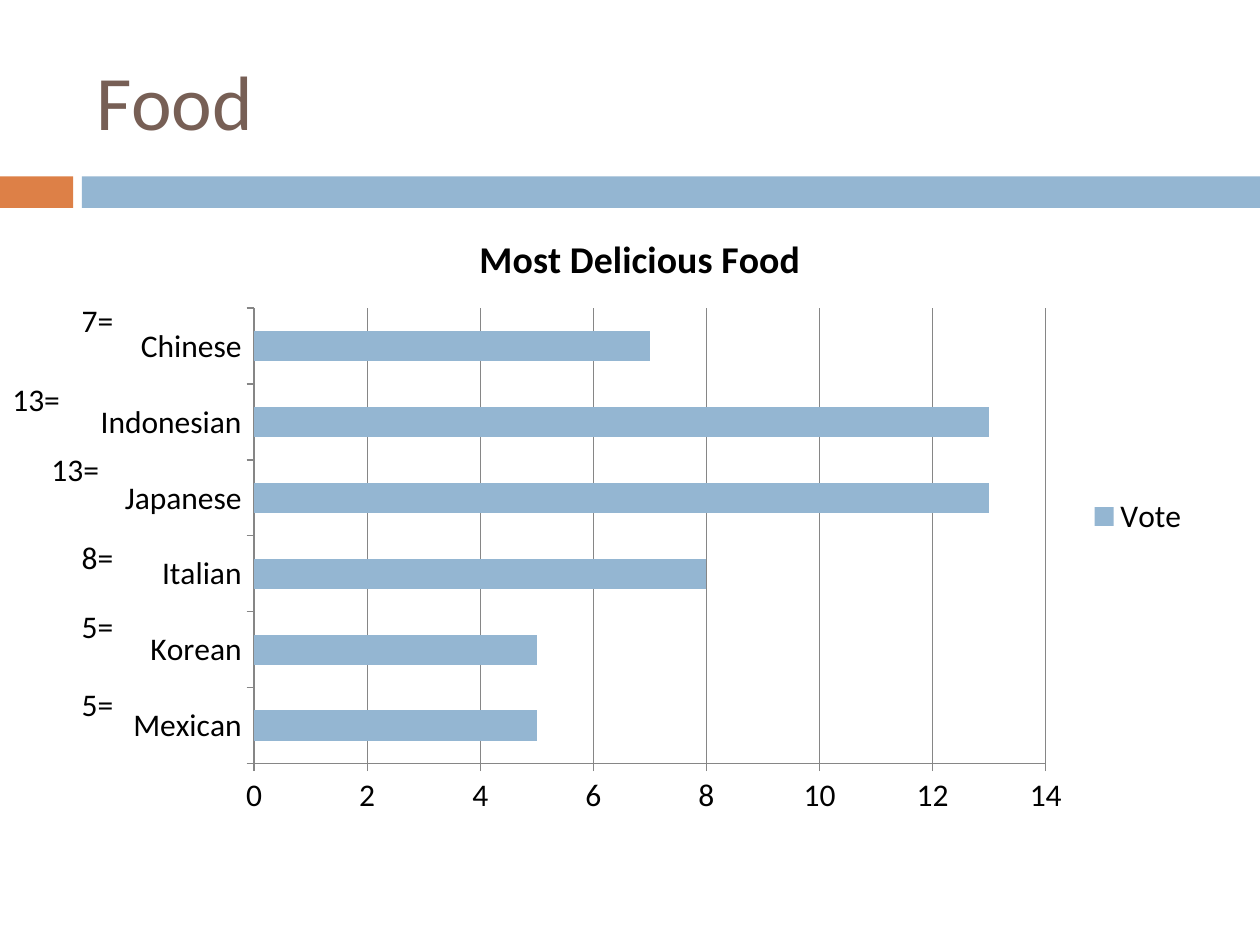
from pptx import Presentation
from pptx.chart.data import CategoryChartData
from pptx.dml.color import RGBColor
from pptx.enum import chart as ch, shapes, text
from pptx.util import Inches, Pt

FONT = "Calibri"
COLORS = {"orange": "DD8047", "blue": "94B6D2", "brown": "775F55",
          "black": "000000", "grid": "868686"}
TITLE = "Food"
CHART_TITLE = "Most Delicious Food"
SERIES = "Vote"
# food, votes, left and top of its vote label; listed from top to bottom
VOTES = [
    ("Chinese", 7, 0.55, 2.34),
    ("Indonesian", 13, 0, 2.97),
    ("Japanese", 13, 0.31, 3.52),
    ("Italian", 8, 0.55, 4.22),
    ("Korean", 5, 0.55, 4.77),
    ("Mexican", 5, 0.55, 5.39),
]
BANDS = [(0, 0.58, "orange"), (0.65, 9.35, "blue")]


def rgb(name):
    return RGBColor.from_string(COLORS[name])


def style(font, size, color="black", bold=False):
    font.name, font.size, font.bold = FONT, Pt(size), bold
    font.color.rgb = rgb(color)


def add_label(slide, words, box, size, color="black"):
    frame = slide.shapes.add_textbox(*map(Inches, box)).text_frame
    frame.word_wrap = True
    frame.vertical_anchor = text.MSO_ANCHOR.MIDDLE
    frame.text = words
    style(frame.paragraphs[0].runs[0].font, size, color)


def add_vote_chart(slide):
    data = CategoryChartData()
    rows = VOTES[::-1]  # bar charts count upwards from the bottom
    data.categories = [row[0] for row in rows]
    data.add_series(SERIES, [row[1] for row in rows])
    chart = slide.shapes.add_chart(
        ch.XL_CHART_TYPE.BAR_CLUSTERED,
        *map(Inches, (0.62, 1.64, 8.92, 4.92)), data).chart
    style(chart.font, 18)

    chart.has_title = True
    chart.chart_title.text_frame.text = CHART_TITLE
    heading = chart.chart_title.text_frame.paragraphs[0].runs[0]
    style(heading.font, 21.6, bold=True)
    chart.has_legend = True
    chart.legend.position = ch.XL_LEGEND_POSITION.RIGHT
    chart.legend.include_in_layout = False

    plot = chart.plots[0]
    plot.vary_by_categories = False
    plot.gap_width = 150
    fill = plot.series[0].format.fill
    fill.solid()
    fill.fore_color.rgb = rgb("blue")

    votes = chart.value_axis
    votes.minimum_scale, votes.maximum_scale, votes.major_unit = 0, 14, 2
    votes.has_major_gridlines = True
    for line in (votes.major_gridlines.format.line, votes.format.line,
                 chart.category_axis.format.line):
        line.color.rgb = rgb("grid")
        line.width = Pt(0.75)
    for axis in (votes, chart.category_axis):
        axis.major_tick_mark = ch.XL_TICK_MARK.OUTSIDE


def main():
    prs = Presentation()
    prs.slide_width, prs.slide_height = Inches(10), Inches(7.5)
    slide = prs.slides.add_slide(prs.slide_layouts[6])
    for left, width, color in BANDS:
        band = slide.shapes.add_shape(
            shapes.MSO_SHAPE.RECTANGLE,
            *map(Inches, (left, 1.4, width, 0.25)))
        band.shadow.inherit = False
        band.fill.solid()
        band.fill.fore_color.rgb = rgb(color)
        band.line.fill.background()
    add_label(slide, TITLE, (0.67, 0.25, 8.92, 1.08), 44, "brown")
    add_vote_chart(slide)
    for _, count, left, top in VOTES:
        add_label(slide, f"{count}=", (left, top, 0.87, 0.4), 18)
    prs.save("out.pptx")


if __name__ == "__main__":
    main()
